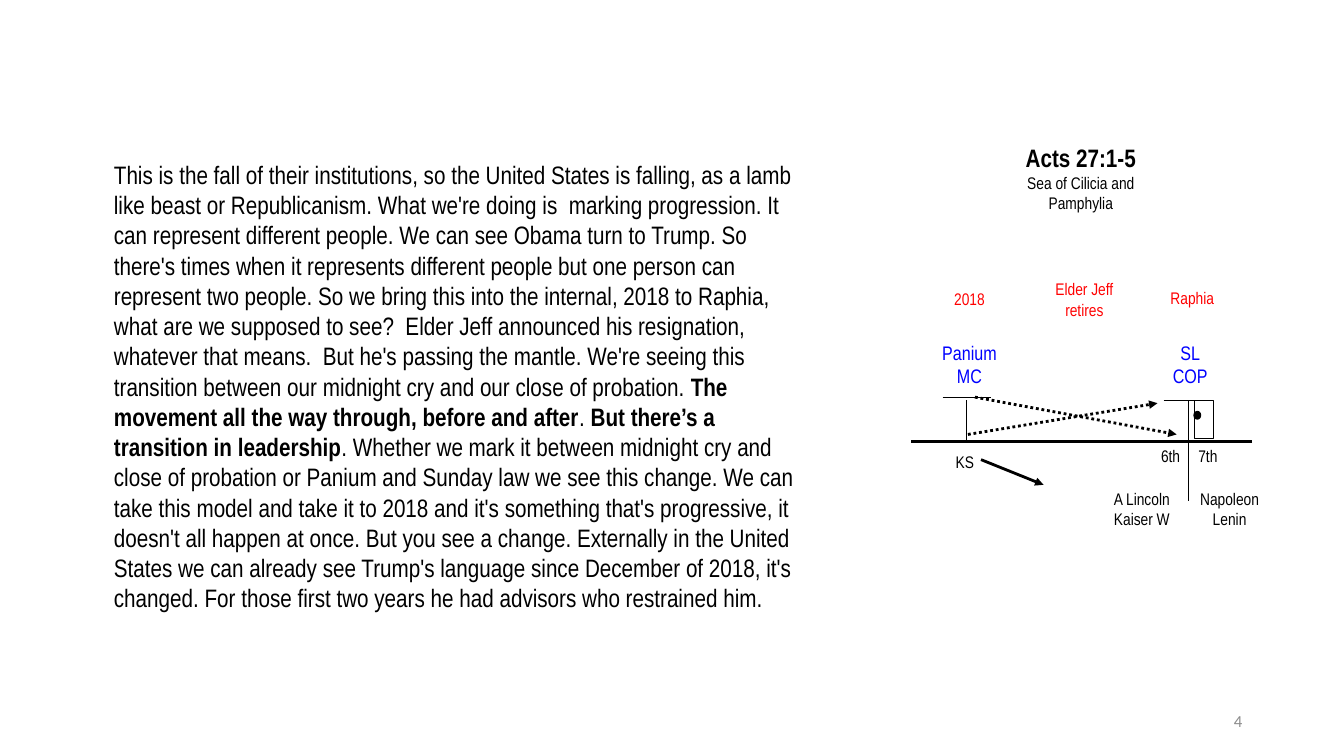
from dataclasses import dataclass

from lxml.etree import SubElement
from pptx import Presentation
from pptx.dml.color import RGBColor
from pptx.enum.dml import MSO_LINE
from pptx.enum.shapes import MSO_CONNECTOR, MSO_SHAPE
from pptx.enum.text import MSO_ANCHOR, MSO_AUTO_SIZE, PP_ALIGN
from pptx.oxml.ns import qn
from pptx.util import Inches, Pt

BLACK, BLUE, RED, GRAY = "000000", "0000FF", "FF0000", "8C8C8C"
NARROW = "Arial Narrow"
INSET = 0.04


@dataclass
class Label:
    lines: list[str]
    left: float
    top: float
    width: float = 0.69
    height: float = 0.5
    color: str = BLACK
    size: int = 12


@dataclass
class Line:
    start: tuple[float, float]
    end: tuple[float, float]
    width: float = 0.75
    arrow: bool = False
    dotted: bool = False


BODY_RUNS = [
    ("This is the fall of their institutions, so the United States is falling, as a lamb "
     "like beast or Republicanism. What we're doing is  marking progression. It can "
     "represent different people. We can see Obama turn to Trump. So there's times when it "
     "represents different people but one person can represent two people. So we bring this "
     "into the internal, 2018 to Raphia, what are we supposed to see?  Elder Jeff announced "
     "his resignation, whatever that means.  But he's passing the mantle. We're seeing this "
     "transition between our midnight cry and our close of probation. ", False),
    ("The movement all the way through, before and after", True),
    (". ", False),
    ("But there’s a transition in leadership", True),
    (". Whether we mark it between midnight cry and close of probation or Panium and Sunday "
     "law we see this change. We can take this model and take it to 2018 and it's something "
     "that's progressive, it doesn't all happen at once. But you see a change. Externally in "
     "the United States we can already see Trump's language since December of 2018, it's "
     "changed. For those first two years he had advisors who restrained him.", False),
]

LABELS = [
    Label(["2018"], 9.27, 2.82, color=RED),
    Label(["Elder Jeff", "retires"], 10.41, 2.73, height=0.57, color=RED),
    Label(["Raphia"], 11.48, 2.81, color=RED),
    Label(["Panium", "MC"], 9.27, 3.34, height=0.56, color=BLUE, size=14),
    Label(["SL", "COP"], 11.46, 3.34, height=0.56, color=BLUE, size=14),
    Label(["KS"], 9.35, 4.44, 0.44, 0.25),
    Label(["6th"], 11.42, 4.38, 0.38, 0.31),
    Label(["7th"], 11.79, 4.38, 0.38, 0.31),
    Label(["A Lincoln", "Kaiser W"], 10.98, 4.81),
    Label(["Napoleon", "Lenin"], 11.85, 4.81),
]

LINES = [
    Line((9.59, 3.97), (9.59, 4.38)),
    Line((9.35, 3.94), (9.83, 3.94)),
    Line((11.79, 3.97), (11.79, 4.38)),
    Line((11.54, 3.97), (12.02, 3.97)),
    Line((12.42, 4.38), (9.04, 4.38), 2),
    Line((9.6, 4.31), (11.48, 4), 2, arrow=True, dotted=True),
    Line((9.67, 3.94), (11.67, 4.31), 2, arrow=True, dotted=True),
    Line((11.79, 4.34), (11.79, 4.97), 1),
    Line((9.73, 4.56), (10.35, 4.81), 2, arrow=True),
]


def rgb(color):
    return RGBColor.from_string(color)


def place(sp, left: float, top: float, width: float, height: float):
    sp.left, sp.top = Inches(left), Inches(top)
    sp.width, sp.height = Inches(width), Inches(height)


def format_frame(tf, inset: float | None = None, anchor=MSO_ANCHOR.TOP):
    tf.word_wrap = True
    tf.auto_size = MSO_AUTO_SIZE.NONE
    tf.vertical_anchor = anchor
    if inset is not None:
        tf.margin_left = tf.margin_right = Inches(inset)
        tf.margin_top = tf.margin_bottom = Inches(inset)


def format_paragraph(p, size: int, color: str = BLACK, align=PP_ALIGN.CENTER,
                     font: str = NARROW, bold: bool = False):
    p.alignment = align
    p.space_before = Pt(0)
    p.font.size, p.font.name, p.font.bold = Pt(size), font, bold
    p.font.color.rgb = rgb(color)


def add_label(slide, label: Label):
    sp = slide.shapes.add_textbox(Inches(label.left), Inches(label.top),
                                  Inches(label.width), Inches(label.height))
    tf = sp.text_frame
    format_frame(tf, INSET)
    tf.text = "\n".join(label.lines)
    for p in tf.paragraphs:
        format_paragraph(p, label.size, label.color)


def add_line(slide, line: Line):
    cxn = slide.shapes.add_connector(MSO_CONNECTOR.STRAIGHT,
                                     *map(Inches, line.start + line.end))
    cxn.line.color.rgb = rgb(BLACK)
    cxn.line.width = Pt(line.width)
    if line.dotted:
        cxn.line.dash_style = MSO_LINE.ROUND_DOT
    if line.arrow:
        SubElement(cxn.line._get_or_add_ln(), qn("a:tailEnd"), type="triangle")
    SubElement(cxn._element.spPr, qn("a:effectLst"))


def add_outline(slide, kind, left: float, top: float, width: float, height: float,
                line_width: float, fill: str | None = None):
    sp = slide.shapes.add_shape(kind, *map(Inches, (left, top, width, height)))
    sp.shadow.inherit = False
    if fill:
        sp.fill.solid()
        sp.fill.fore_color.rgb = rgb(fill)
    else:
        sp.fill.background()
    sp.line.color.rgb = rgb(BLACK)
    sp.line.width = Pt(line_width)


def fill_title(title):
    place(title, 9.88, 1.37, 1.68, 0.88)
    tf = title.text_frame
    format_frame(tf, INSET)
    tf.text = "Acts 27:1-5\nSea of Cilicia and Pamphylia"
    heading, subtitle = tf.paragraphs
    format_paragraph(heading, 18, bold=True)
    format_paragraph(subtitle, 12)


def fill_body(body):
    place(body, 1.03, 1.53, 7.04, 4.95)
    tf = body.text_frame
    format_frame(tf)
    p = tf.paragraphs[0]
    format_paragraph(p, 18, align=PP_ALIGN.LEFT)
    pPr = p._p.get_or_add_pPr()
    pPr.set("marL", "0")
    pPr.set("indent", "0")
    pPr.insert_element_before(pPr.makeelement(qn("a:buNone")), "a:tabLst", "a:defRPr")
    for text, bold in BODY_RUNS:
        r = p.add_run()
        r.text = text
        r.font.bold = bold


def add_page_number(slide, number: int):
    sp = slide.shapes.add_textbox(Inches(9.42), Inches(6.95), Inches(3), Inches(0.4))
    tf = sp.text_frame
    format_frame(tf, anchor=MSO_ANCHOR.MIDDLE)
    tf.text = str(number)
    format_paragraph(tf.paragraphs[0], 12, GRAY, PP_ALIGN.RIGHT, "Calibri")


def main():
    prs = Presentation()
    prs.slide_width, prs.slide_height = Inches(13.33), Inches(7.5)
    s = prs.slides.add_slide(prs.slide_layouts[1])
    fill_title(s.shapes.title)
    fill_body(s.placeholders[1])
    add_outline(s, MSO_SHAPE.RECTANGLE, 11.84, 3.97, 0.19, 0.38, 0.25)
    add_outline(s, MSO_SHAPE.OVAL, 11.85, 4.09, 0.05, 0.06, 2, BLACK)
    for line in LINES:
        add_line(s, line)
    for label in LABELS:
        add_label(s, label)
    add_page_number(s, 4)
    prs.save("out.pptx")


if __name__ == "__main__":
    main()
